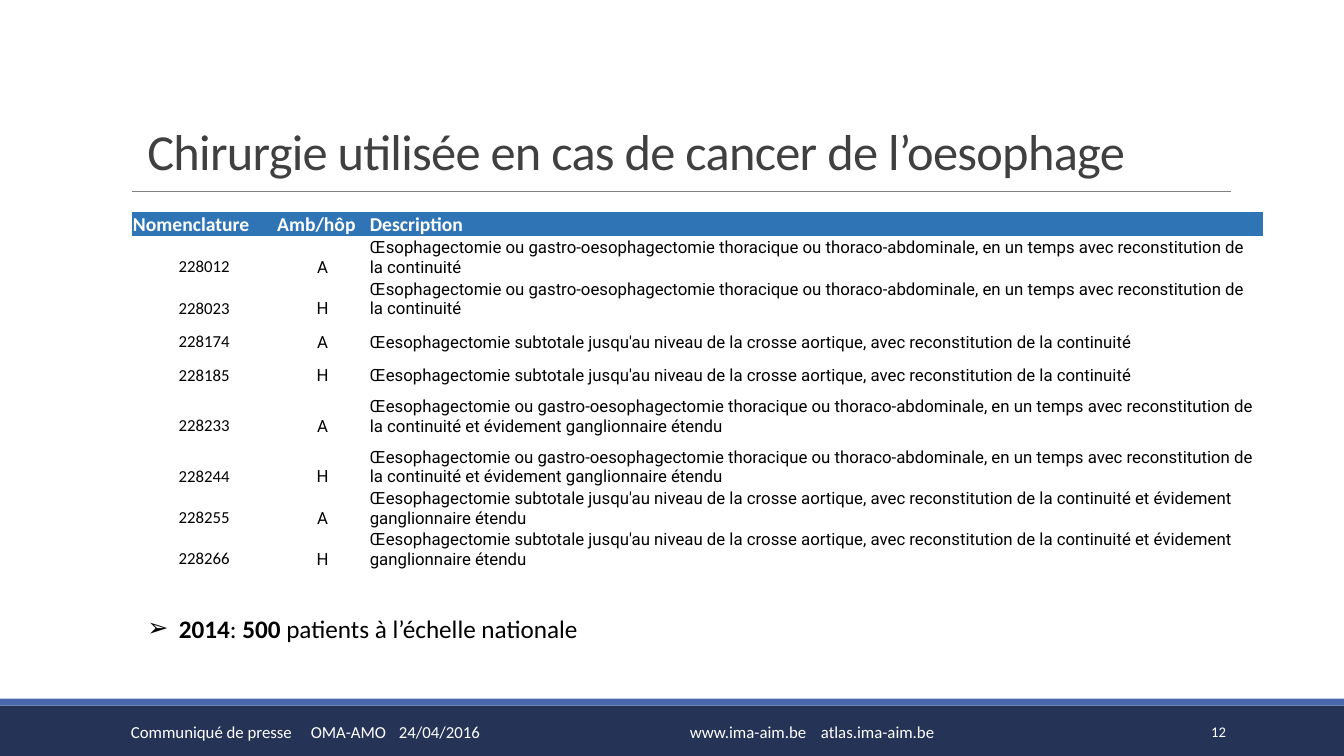
from collections import namedtuple

from lxml.etree import SubElement
from pptx import Presentation
from pptx.dml.color import RGBColor
from pptx.enum.shapes import MSO_CONNECTOR, MSO_SHAPE
from pptx.enum.text import MSO_ANCHOR, MSO_AUTO_SIZE, PP_ALIGN
from pptx.oxml.ns import qn
from pptx.util import Pt

NAVY = RGBColor(0x25, 0x33, 0x56)
BLUE = RGBColor(0x4A, 0x66, 0xAC)
HEADER_BLUE = RGBColor(0x2F, 0x75, 0xB5)
GRAY = RGBColor(0x80, 0x80, 0x80)
DARK = RGBColor(0x40, 0x40, 0x40)
WHITE = RGBColor(0xFF, 0xFF, 0xFF)
BLACK = RGBColor(0, 0, 0)

PLAIN_TABLE = "{2D5ABB26-0587-4C30-8999-92F81FD0307C}"
Box = namedtuple("Box", "left top width height")

TITLE = "Chirurgie utilisée en cas de cancer de l’oesophage"
HEADERS = ["Nomenclature", "Amb/hôp", "Description"]
THORACIC = ("ophagectomie ou gastro-oesophagectomie thoracique ou thoraco-abdominale, "
            "en un temps avec reconstitution de la continuité")
SUBTOTAL = ("Œesophagectomie subtotale jusqu'au niveau de la crosse aortique, "
            "avec reconstitution de la continuité")
EXTENDED = " et évidement ganglionnaire étendu"
PROCEDURES = [
    (("228012", "228023"), "Œs" + THORACIC, 24),
    (("228174", "228185"), SUBTOTAL, 24),
    (("228233", "228244"), "Œes" + THORACIC + EXTENDED, 36),
    (("228255", "228266"), SUBTOTAL + EXTENDED, 24),
]
FINDING = [("2014", True), (": ", False), ("500 ", True),
           ("patients à l’échelle nationale", False)]


def apply(target, formats):
    """Set each named format value on the target."""
    for name, value in formats.items():
        setattr(target, name, value)


def add_span(para, text, size, color, name="Calibri", bold=False):
    """Add a formatted run to a paragraph."""
    span = para.add_run()
    span.text = text
    apply(span.font, {"size": Pt(size), "name": name, "bold": bold})
    span.font.color.rgb = color
    return span


def place(shape, box):
    """Move a placeholder to a box given in points."""
    apply(shape, {name: Pt(value) for name, value in box._asdict().items()})


def add_bar(page, box, color):
    """Draw a plain filled bar."""
    bar = page.shapes.add_shape(MSO_SHAPE.RECTANGLE, *map(Pt, box))
    bar.shadow.inherit = False
    bar.fill.solid()
    bar.fill.fore_color.rgb = color
    bar.line.fill.background()


def add_label(page, box, text, size=12, align=PP_ALIGN.LEFT, tabs=(), inset=7.2):
    """Write one white footer label with its tab stops."""
    frame = page.shapes.add_textbox(*map(Pt, box)).text_frame
    apply(frame, {"word_wrap": True, "vertical_anchor": MSO_ANCHOR.MIDDLE,
                  "margin_left": Pt(inset)})
    para = frame.paragraphs[0]
    para.alignment = align
    if tabs:
        stops = SubElement(para._p.get_or_add_pPr(), qn("a:tabLst"))
        for stop in tabs:
            SubElement(stops, qn("a:tab"), pos=str(Pt(stop)), algn="l")
    add_span(para, text, size, WHITE)


def add_footer(page, box):
    """Build the two bars and the labels at the foot of the page."""
    add_bar(page, Box(box.left, box.top + 5, box.width, box.height - 5), NAVY)
    add_bar(page, Box(box.left, box.top, box.width, 5), BLUE)
    top = box.top + 9.3
    add_label(page, Box(box.left + 86.4, top, 294.5, 28.8),
              "Communiqué de presse\tOMA-AMO\t24/04/2016", tabs=(128.5, 191.4))
    add_label(page, Box(box.left + 390.2, top, 379.4, 28.8),
              "www.ima-aim.be\tatlas.ima-aim.be", tabs=(93.6,), inset=102.6)
    add_label(page, Box(box.left + 779.8, top, 103, 28.8), "12", 10.5, PP_ALIGN.RIGHT)


def add_title(page, box):
    """Fill the title placeholder and draw the rule below it."""
    title = page.shapes.title
    place(title, box)
    frame = title.text_frame
    apply(frame, {"vertical_anchor": MSO_ANCHOR.BOTTOM, "word_wrap": True,
                  "auto_size": MSO_AUTO_SIZE.NONE})
    para = frame.paragraphs[0]
    apply(para, {"alignment": PP_ALIGN.LEFT, "line_spacing": 0.85})
    span = add_span(para, TITLE, 36, DARK)
    span.font._element.set("spc", "-50")
    left, level = box.left - 3.6, box.top + box.height + 4.3
    rule = page.shapes.add_connector(MSO_CONNECTOR.STRAIGHT, Pt(left), Pt(level),
                                     Pt(left + 784.8), Pt(level))
    rule.line.color.rgb = GRAY
    rule.line.width = Pt(0.5)
    SubElement(rule._element.spPr, qn("a:effectLst"))


def fill_cell(cell, text, fill=None, align=PP_ALIGN.LEFT, **formats):
    """Write one table cell with narrow margins."""
    apply(cell, {"vertical_anchor": MSO_ANCHOR.BOTTOM, "margin_left": Pt(0.7),
                 "margin_right": Pt(0.7), "margin_top": Pt(0.7), "margin_bottom": 0})
    if fill is None:
        cell.fill.background()
    else:
        cell.fill.solid()
        cell.fill.fore_color.rgb = fill
    para = cell.text_frame.paragraphs[0]
    para.alignment = align
    add_span(para, text, **formats)


def add_procedures(page, box):
    """Build the table of procedures, one row for each code."""
    rows = [(code, setting, description, height)
            for codes, description, height in PROCEDURES
            for code, setting in zip(codes, "AH")]
    frame = page.shapes.add_table(len(rows) + 1, len(HEADERS), *map(Pt, box))
    table = frame.table
    apply(table, {"horz_banding": False, "first_row": True})
    table._tbl.tblPr.find(qn("a:tableStyleId")).text = PLAIN_TABLE
    for column, width in zip(table.columns, (103, 66.2, box.width - 169.2)):
        column.width = Pt(width)
    table.rows[0].height = Pt(14.4)
    for index, header in enumerate(HEADERS):
        fill_cell(table.cell(0, index), header, HEADER_BLUE,
                  size=14, color=WHITE, bold=True)
    looks = [("Calibri", PP_ALIGN.CENTER), ("Roboto", PP_ALIGN.CENTER),
             ("Roboto", PP_ALIGN.LEFT)]
    for number, (*texts, height) in enumerate(rows, 1):
        table.rows[number].height = Pt(height)
        for index, (text, (name, align)) in enumerate(zip(texts, looks)):
            fill_cell(table.cell(number, index), text, align=align,
                      size=12, color=BLACK, name=name)


def add_finding(page, box):
    """Fill the body placeholder with the arrow bullet."""
    body = page.placeholders[1]
    place(body, box)
    frame = body.text_frame
    apply(frame, {"word_wrap": True, "auto_size": MSO_AUTO_SIZE.NONE,
                  "vertical_anchor": MSO_ANCHOR.TOP})
    para = frame.paragraphs[0]
    para.space_before = Pt(0)
    properties = para._p.get_or_add_pPr()
    properties.set("marL", str(Pt(22.5)))
    properties.set("indent", str(Pt(-22.5)))
    SubElement(properties, qn("a:buChar"), char="➢")
    for text, bold in FINDING:
        add_span(para, text, 18, BLACK, bold=bold)


def main():
    """Build and save the deck."""
    deck = Presentation()
    apply(deck, {"slide_width": Pt(960), "slide_height": Pt(540)})
    page = deck.slides.add_slide(deck.slide_layouts[1])
    add_footer(page, Box(0, 499, 960, 41))
    add_title(page, Box(98, 18, 792, 114.5))
    add_procedures(page, Box(94.3, 151.2, 807.8, 230.4))
    add_finding(page, Box(98, 434.2, 536.4, 28.8))
    deck.save("out.pptx")


if __name__ == "__main__":
    main()
